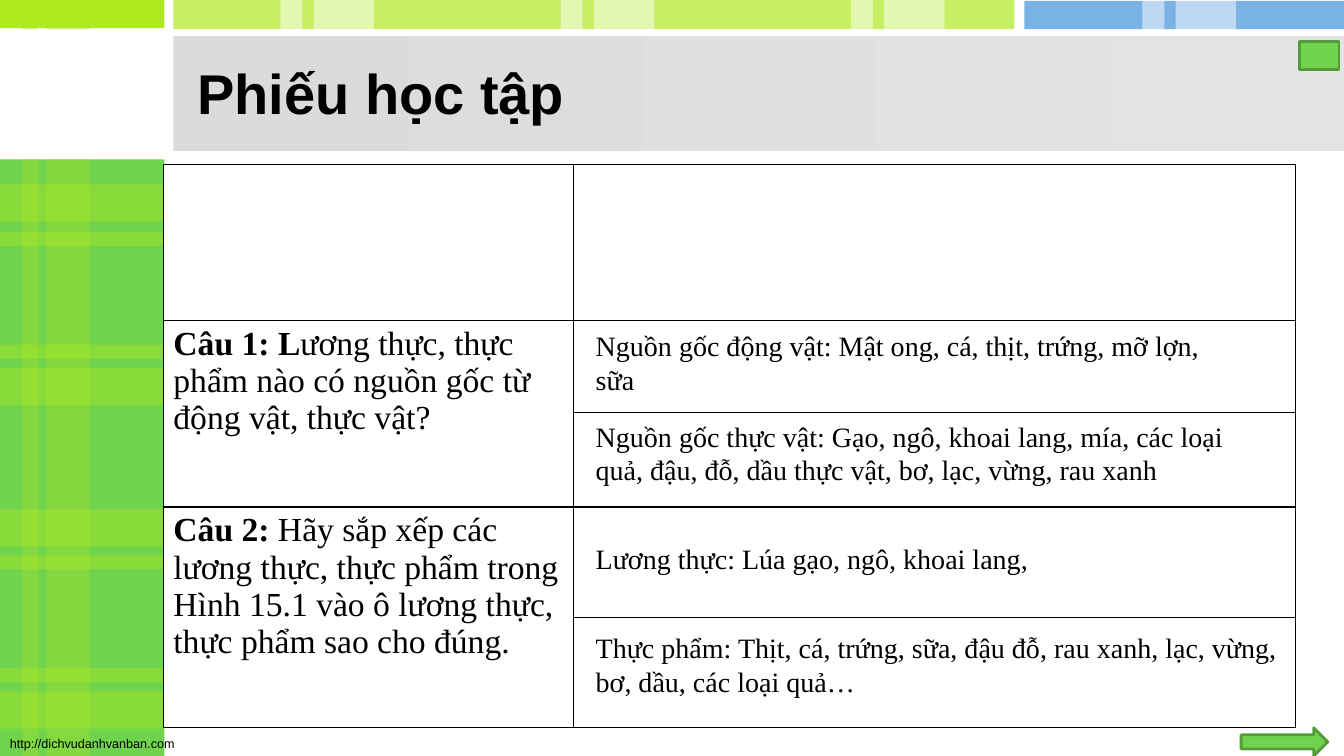
from pptx import Presentation
from pptx.dml.color import RGBColor
from pptx.enum.shapes import MSO_SHAPE as Shape
from pptx.enum.text import MSO_ANCHOR as Anchor
from pptx.oxml.ns import qn
from pptx.util import Inches, Pt
from lxml.etree import SubElement

W, H = 13.33, 7.5
GREEN, LIME, BLUE, WHITE, BLACK = "70D34D", "AFE91F", "4192DB", "FFFFFF", "000000"
EDGE = "539C39"
SERIF, SANS = "Times New Roman", "Arial"
SIDE_W, SIDE_TOP, STRIP_H = 1.63, 1.58, 0.29

BLOCKS = [
    (0, SIDE_TOP, SIDE_W, H - SIDE_TOP, GREEN, 100),
    (0, 0, SIDE_W, 0.28, LIME, 100),
    (1.72, 0, 8.34, STRIP_H, LIME, 70),
    (10.16, 0.01, 3.17, 0.28, BLUE, 70),
]
BANDS = [(1.83, 2.3), (3.65, 3.42), (5.05, 5.51), (6.86, 6.63)]
GLINTS = [(2.78, 0.31), (5.56, 0.31), (8.44, 0.31), (11.33, 0.33)]
SIDE_STRIPES = [(0.22, 0.16), (0.46, 0.43)]
HEADER = (1.72, 0.36, 11.61, 1.14)

LABELS = [
    ((0, 7.25, 1.85, 0.25), "http://dichvudanhvanban.com", 9, SANS, False, False),
    ((1.86, 0.5, 9.47, 0.83), "Phiếu học tập", 40, SANS, True, True),
]
ANSWERS = [
    (3.21, 6.5, 0.77, "Nguồn gốc động vật: Mật ong, cá, thịt, trứng, mỡ lợn, sữa"),
    (4.11, 6.74, 0.77, "Nguồn gốc thực vật: Gạo, ngô, khoai lang, mía, các loại quả, "
                       "đậu, đỗ, dầu thực vật, bơ, lạc, vừng, rau xanh"),
    (5.32, 6.3, 0.44, "Lương thực: Lúa gạo, ngô, khoai lang,"),
    (6.21, 7.04, 0.77, "Thực phẩm: Thịt, cá, trứng, sữa, đậu đỗ, rau xanh, lạc, vừng, "
                       "bơ, dầu, các loại quả…"),
]
ANSWER_X = 5.81
QUESTIONS = {
    1: ("Câu 1: L", "ương thực, thực phẩm nào có nguồn gốc từ động vật, thực vật?"),
    3: ("Câu 2: ", "Hãy sắp xếp các lương thực, thực phẩm trong Hình 15.1 "
                   "vào ô lương thực, thực phẩm sao cho đúng."),
}
COLS, ROWS = [4.07, 7.16], [1.55, 0.91, 0.94, 1.1, 1.09]
BUTTONS = [(Shape.RIGHT_ARROW, (12.31, 7.22, 0.86, 0.28)),
           (Shape.RECTANGLE, (12.89, 0.41, 0.39, 0.28))]


def rgb(value):
    """Turn a hex string into a colour."""
    return RGBColor.from_string(value)


def add_block(s, box, color, alpha=100, kind=Shape.RECTANGLE, edge=None):
    """Draw a filled shape, see-through when alpha is below 100."""
    sp = s.shapes.add_shape(kind, *map(Inches, box))
    sp.shadow.inherit = False
    sp.fill.solid()
    sp.fill.fore_color.rgb = rgb(color)
    if alpha < 100:
        clr = sp._element.spPr.find(qn("a:solidFill"))[0]
        SubElement(clr, qn("a:alpha"), val=str(alpha * 1000))
    if edge:
        sp.line.color.rgb = rgb(edge)
        sp.line.width = Pt(2)
    else:
        sp.line.fill.background()
    return sp


def add_run(p, text, size, font, bold=False):
    """Append one black run to a paragraph."""
    r = p.add_run()
    r.text = text
    r.font.size, r.font.name, r.font.bold = Pt(size), font, bold
    r.font.color.rgb = rgb(BLACK)


def add_label(s, box, text, size, font, bold=False, wrap=True):
    """Place a text box with one paragraph."""
    tf = s.shapes.add_textbox(*map(Inches, box)).text_frame
    tf.word_wrap = wrap
    tf.vertical_anchor = Anchor.MIDDLE if bold else Anchor.TOP
    add_run(tf.paragraphs[0], text, size, font, bold)


def add_backdrop(s):
    """Draw the plaid side panel, the top strips and the title bar."""
    for *box, color, alpha in BLOCKS:
        add_block(s, box, color, alpha)
    for wide, thin in BANDS:
        add_block(s, (0, wide, SIDE_W, 0.37), LIME, 40)
        add_block(s, (0, thin, SIDE_W, 0.14), LIME, 40)
    for x, w in SIDE_STRIPES:
        add_block(s, (x, SIDE_TOP, w, H - SIDE_TOP), LIME, 30)
        add_block(s, (x, 0, w, STRIP_H), LIME, 50)
    for x, h in GLINTS:
        add_block(s, (x, 0, 0.22, h), WHITE, 50)
        add_block(s, (x + 0.33, 0, 0.6, h), WHITE, 50)
    bar = add_block(s, HEADER, WHITE)
    bar.fill.gradient()
    bar.fill.gradient_angle = 0
    for stop, color in zip(bar.fill.gradient_stops, ("DBDBDB", "E4E4E4")):
        stop.color.rgb = rgb(color)


def style_cell(cell):
    """Give a cell a white fill and thin black borders."""
    tcPr = cell._tc.get_or_add_tcPr()
    for side in ("lnL", "lnR", "lnT", "lnB"):
        ln = SubElement(tcPr, qn("a:" + side), w=str(Pt(1)))
        SubElement(SubElement(ln, qn("a:solidFill")), qn("a:srgbClr"), val=BLACK)
    cell.fill.solid()
    cell.fill.fore_color.rgb = rgb(WHITE)


def add_worksheet(s):
    """Build the question table."""
    box = (1.62, 1.63, sum(COLS), sum(ROWS))
    table = s.shapes.add_table(len(ROWS), len(COLS), *map(Inches, box)).table
    for col, w in zip(table.columns, COLS):
        col.width = Inches(w)
    for row, h in zip(table.rows, ROWS):
        row.height = Inches(h)
        for cell in row.cells:
            style_cell(cell)
    for i, (lead, rest) in QUESTIONS.items():
        cell = table.cell(i, 0)
        cell.merge(table.cell(i + 1, 0))
        p = cell.text_frame.paragraphs[0]
        add_run(p, lead, 24, SERIF, True)
        add_run(p, rest, 24, SERIF)


def main():
    """Build and save the slide."""
    prs = Presentation()
    prs.slide_width, prs.slide_height = Inches(W), Inches(H)
    s = prs.slides.add_slide(prs.slide_layouts[6])
    add_backdrop(s)
    for label in LABELS:
        add_label(s, *label)
    add_worksheet(s)
    for y, w, h, text in ANSWERS:
        add_label(s, (ANSWER_X, y, w, h), text, 20, SERIF)
    for kind, box in BUTTONS:
        add_block(s, box, GREEN, kind=kind, edge=EDGE)
    prs.save("out.pptx")


if __name__ == "__main__":
    main()
